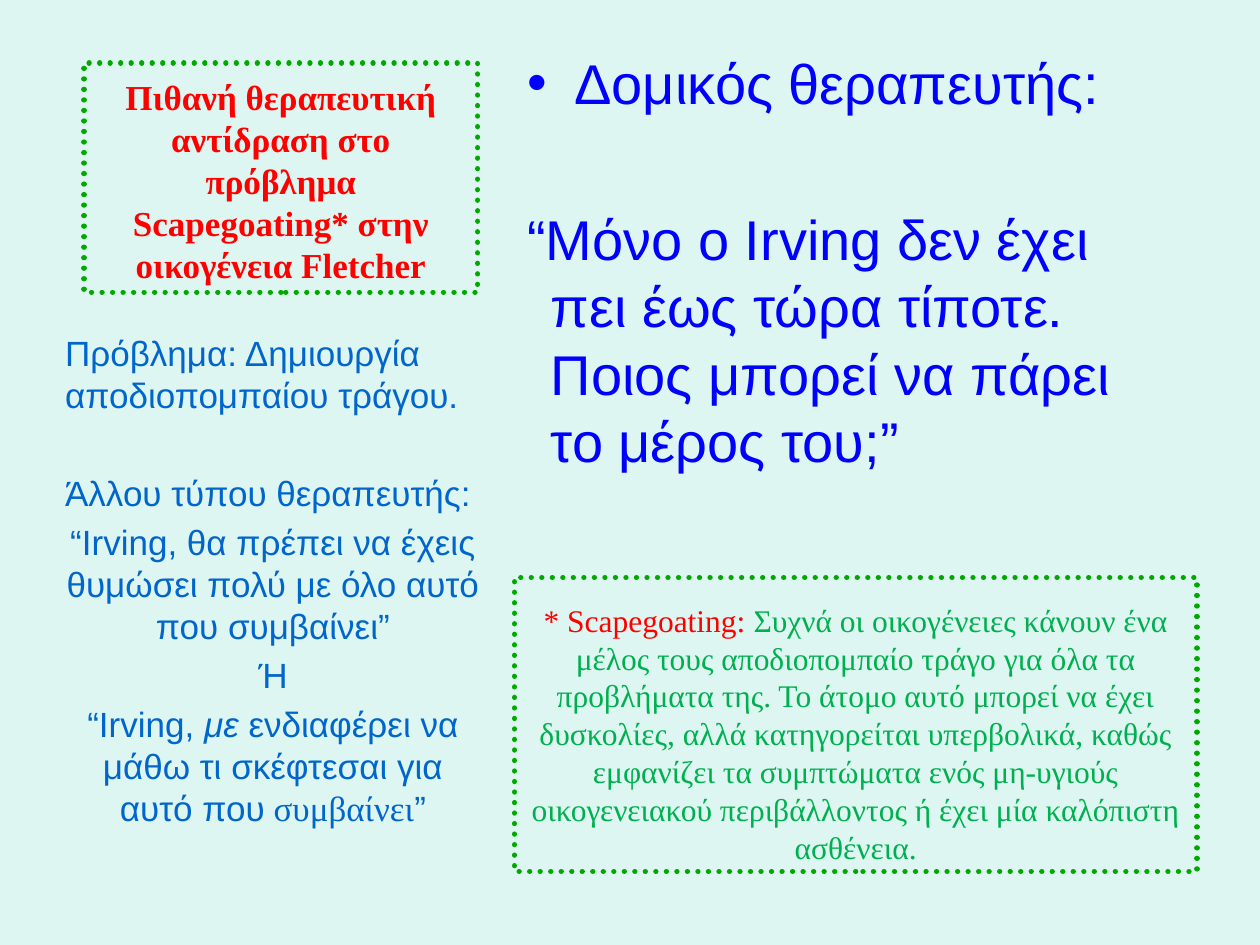
from lxml import etree
from pptx import Presentation
from pptx.dml.color import RGBColor
from pptx.enum import dml, text
from pptx.oxml import ns
from pptx.util import Pt

COLORS = {
    "background": "DEF6F1",
    "border": "00A800",
    "red": "FF0000",
    "blue": "0000FF",
    "steel": "0066CC",
    "green": "00B050",
}
SERIF = "Times New Roman"
SANS = "Arial"


def rgb(name):
    return RGBColor.from_string(COLORS[name])


def place(shape, left, top, width, height, anchor):
    shape.left, shape.top = Pt(left), Pt(top)
    shape.width, shape.height = Pt(width), Pt(height)
    frame = shape.text_frame
    frame.word_wrap = True
    frame.auto_size = text.MSO_AUTO_SIZE.NONE
    frame.vertical_anchor = anchor
    return frame


def dotted_border(shape):
    shape.line.color.rgb = rgb("border")
    shape.line.width = Pt(3)
    shape.line.dash_style = dml.MSO_LINE.ROUND_DOT
    shape._element.spPr.find(ns.qn("a:ln")).set("cap", "rnd")


def add_run(paragraph, wording, size, color, font=SANS, bold=False, italic=False):
    run = paragraph.add_run()
    run.text = wording
    run.font.name = font
    run.font.size = Pt(size)
    run.font.bold = bold
    run.font.italic = italic
    run.font.color.rgb = rgb(color)


def add_paragraph(frame, first=False, align=text.PP_ALIGN.LEFT, before=0):
    paragraph = frame.paragraphs[0] if first else frame.add_paragraph()
    paragraph.alignment = align
    paragraph.space_before = Pt(before)
    return paragraph


def set_indent(paragraph, indent, bullet=None):
    properties = paragraph._p.get_or_add_pPr()
    properties.set("marL", str(Pt(indent)))
    properties.set("indent", str(-Pt(indent)))
    if bullet:
        etree.SubElement(properties, ns.qn("a:buChar")).set("char", bullet)
    else:
        etree.SubElement(properties, ns.qn("a:buNone"))


def fill_title(title):
    frame = place(title, 48, 36, 225, 131, text.MSO_ANCHOR.BOTTOM)
    dotted_border(title)
    heading = add_paragraph(frame, True, text.PP_ALIGN.CENTER)
    add_run(heading, "Πιθανή θεραπευτική αντίδραση στο πρόβλημα Scapegoating* στην "
            "οικογένεια Fletcher", 20, "red", SERIF, bold=True)


def fill_structural_therapist(body):
    frame = place(body, 294, 24, 384, 423, text.MSO_ANCHOR.TOP)
    therapist = add_paragraph(frame, True)
    set_indent(therapist, 27, "•")
    add_run(therapist, "Δομικός θεραπευτής:", 32, "blue")
    quote = add_paragraph(frame, before=51)
    set_indent(quote, 13.5)
    add_run(quote, "“Μόνο ο Irving δεν έχει πει έως τώρα τίποτε. "
            "Ποιος μπορεί να πάρει το μέρος του;”", 32, "blue")


def fill_other_therapist(caption):
    frame = place(caption, 30, 186, 252, 330, text.MSO_ANCHOR.TOP)
    left, center = text.PP_ALIGN.LEFT, text.PP_ALIGN.CENTER
    statements = [
        (left, 0, [("Πρόβλημα: Δημιουργία αποδιοπομπαίου τράγου.", {})]),
        (left, 32, [("Άλλου τύπου θεραπευτής:", {})]),
        (center, 4, [("“Irving, θα πρέπει να έχεις θυμώσει πολύ με όλο αυτό "
                      "που συμβαίνει”", {})]),
        (center, 4, [("Ή", {})]),
        (center, 4, [("“Irving, ", {}), ("με", {"italic": True}),
                     (" ενδιαφέρει να μάθω τι σκέφτεσαι για αυτό που", {}),
                     (" συμβαίνει", {"font": SERIF}), ("”", {})]),
    ]
    for index, (align, before, runs) in enumerate(statements):
        paragraph = add_paragraph(frame, index == 0, align, before)
        for wording, style in runs:
            add_run(paragraph, wording, 20, "steel", **style)


def add_definition(slide):
    definition = slide.shapes.add_textbox(0, 0, 0, 0)
    frame = place(definition, 294, 330, 390, 168, text.MSO_ANCHOR.BOTTOM)
    dotted_border(definition)
    paragraph = add_paragraph(frame, True, text.PP_ALIGN.CENTER)
    add_run(paragraph, "* Scapegoating: ", 18, "red", SERIF)
    add_run(paragraph, "Συχνά οι οικογένειες κάνουν ένα μέλος τους αποδιοπομπαίο "
            "τράγο για όλα τα προβλήματα της. Το άτομο αυτό μπορεί να έχει "
            "δυσκολίες, αλλά κατηγορείται υπερβολικά, καθώς εμφανίζει τα "
            "συμπτώματα ενός μη-υγιούς οικογενειακού περιβάλλοντος ή έχει μία "
            "καλόπιστη ασθένεια.", 18, "green", SERIF)


def main():
    deck = Presentation()
    deck.slide_width, deck.slide_height = Pt(720), Pt(540)
    slide = deck.slides.add_slide(deck.slide_layouts[7])
    slide.background.fill.solid()
    slide.background.fill.fore_color.rgb = rgb("background")
    title, body, caption = slide.placeholders
    fill_title(title)
    fill_structural_therapist(body)
    fill_other_therapist(caption)
    add_definition(slide)
    deck.save("out.pptx")


if __name__ == "__main__":
    main()
